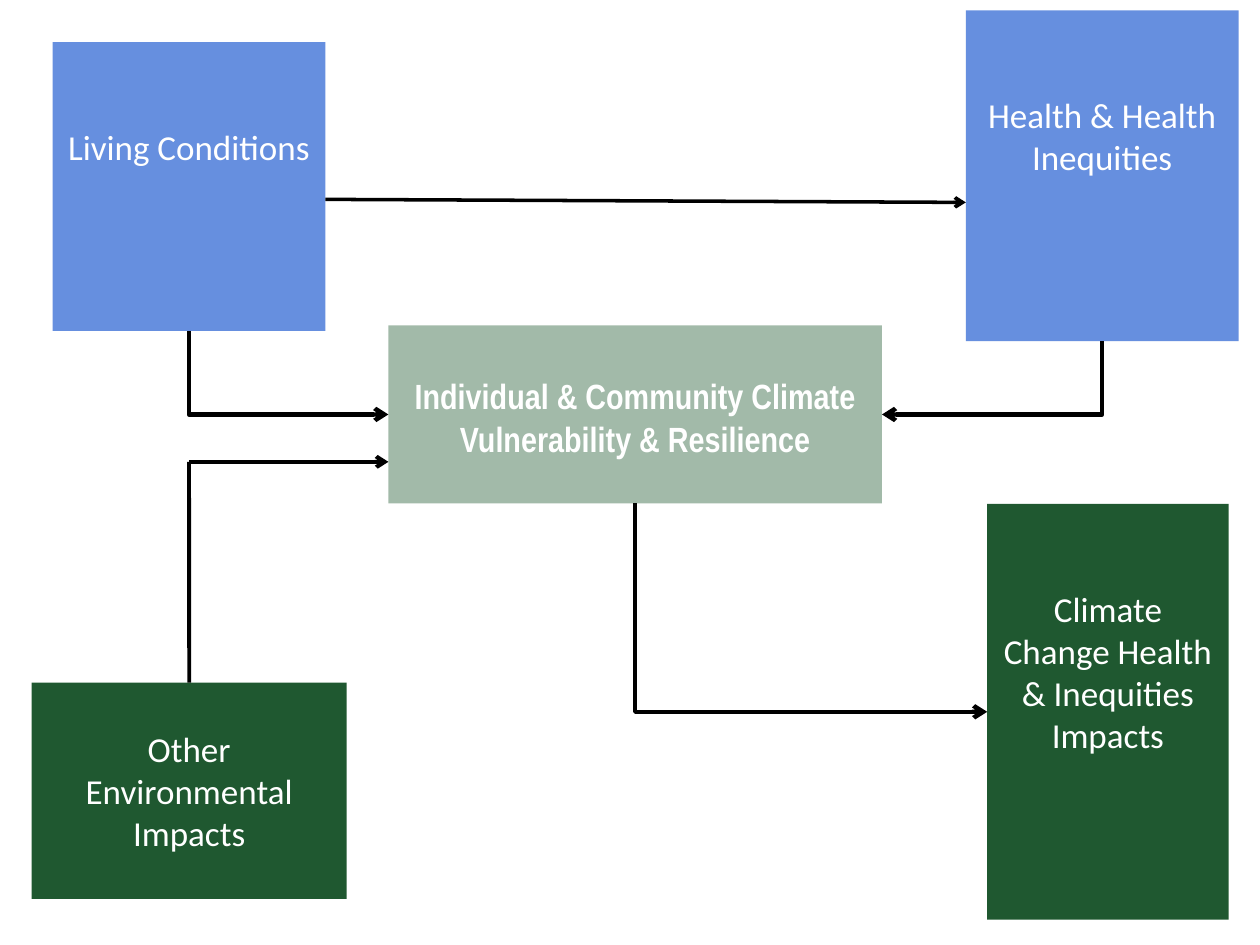
"""Build a slide showing how living conditions and health shape climate vulnerability."""
from lxml import etree
from pptx import Presentation
from pptx import util as u
from pptx.dml.color import RGBColor
from pptx.enum import shapes, text
from pptx.oxml import ns

COLORS = {"blue": "668FDF", "green": "1F5830", "white": "FFFFFF", "black": "000000"}
TOP, LEFT, BOTTOM, RIGHT = range(4)


def rgb(name):
    """Return the named colour."""
    return RGBColor.from_string(COLORS[name])


def add_box(s, label, box, color, inset, font="Calibri", bold=None, alpha=None):
    """Add a filled rectangle whose label starts at the given top inset."""
    sp = s.shapes.add_shape(shapes.MSO_SHAPE.RECTANGLE, *map(u.Cm, box))
    sp.shadow.inherit = False
    sp.fill.solid()
    sp.fill.fore_color.rgb = rgb(color)
    sp.line.fill.background()
    if alpha:
        clr = sp.fill._xPr.find(".//" + ns.qn("a:srgbClr"))
        etree.SubElement(clr, ns.qn("a:alpha")).set("val", str(alpha * 1000))
    tf = sp.text_frame
    tf.word_wrap = True
    tf.vertical_anchor = text.MSO_ANCHOR.TOP
    tf.margin_top = u.Cm(inset)
    p = tf.paragraphs[0]
    p.text = label
    p.alignment = text.PP_ALIGN.CENTER
    p.font.name, p.font.size, p.font.bold = font, u.Pt(20), bold
    p.font.color.rgb = rgb("white")
    return sp


def style_line(cxn, width, arrow=True):
    """Give a connector its black line, without shadow, and an arrowhead."""
    cxn.line.color.rgb = rgb("black")
    cxn.line.width = u.Pt(width)
    if arrow:
        etree.SubElement(cxn.line._get_or_add_ln(), ns.qn("a:tailEnd")).set("type", "arrow")
    etree.SubElement(cxn._element.spPr, ns.qn("a:effectLst"))


def add_line(s, points, width, arrow=True):
    """Add a straight line between two points."""
    cxn = s.shapes.add_connector(shapes.MSO_CONNECTOR.STRAIGHT, *map(u.Cm, points))
    style_line(cxn, width, arrow)
    return cxn


def add_elbow(s, start, end, side):
    """Add a one-bend arrow from the bottom of a box to a side of another."""
    cxn = s.shapes.add_connector(shapes.MSO_CONNECTOR.ELBOW, 0, 0, 0, 0)
    cxn.begin_connect(start, BOTTOM)
    cxn.end_connect(end, side)
    w, h = cxn.width, cxn.height
    cxn.left, cxn.top = cxn.left + (w - h) // 2, cxn.top + (h - w) // 2
    cxn.width, cxn.height = h, w
    spPr = cxn._element.spPr
    spPr.find(ns.qn("a:prstGeom")).set("prst", "bentConnector2")
    rightward = side == LEFT
    spPr.xfrm.rot = 270 if rightward else 90
    spPr.xfrm.flipH, spPr.xfrm.flipV = rightward, False
    style_line(cxn, 2.5)


def main():
    """Build and save the slide."""
    prs = Presentation()
    prs.slide_width, prs.slide_height = u.Cm(25.4), u.Cm(19.05)
    s = prs.slides.add_slide(prs.slide_layouts[6])

    resilience = add_box(s, "Individual & Community Climate Vulnerability & Resilience",
                         (7.83, 6.56, 9.95, 3.59), "green", 1, "Arial Narrow", True, 41)
    living = add_box(s, "Living Conditions", (1.06, 0.85, 5.5, 5.82), "blue", 1.68)
    health = add_box(s, "Health & Health Inequities", (19.47, 0.21, 5.5, 6.67), "blue", 1.68)
    impacts = add_box(s, "Climate Change Health & Inequities Impacts",
                      (19.9, 10.16, 4.87, 8.38), "green", 1.68)

    add_line(s, (6.56, 4.02, 19.47, 4.08), 2)
    add_elbow(s, living, resilience, LEFT)
    add_elbow(s, health, resilience, RIGHT)
    add_elbow(s, resilience, impacts, LEFT)

    other = add_box(s, "Other Environmental Impacts", (0.64, 13.76, 6.35, 4.36), "green", 0.9)
    add_line(s, (3.81, 9.31, 7.83, 9.31), 2.25)
    add_line(s, (3.81, 13.76, 3.81, 9.31), 2.25, arrow=False).begin_connect(other, TOP)

    prs.save("out.pptx")


if __name__ == "__main__":
    main()
